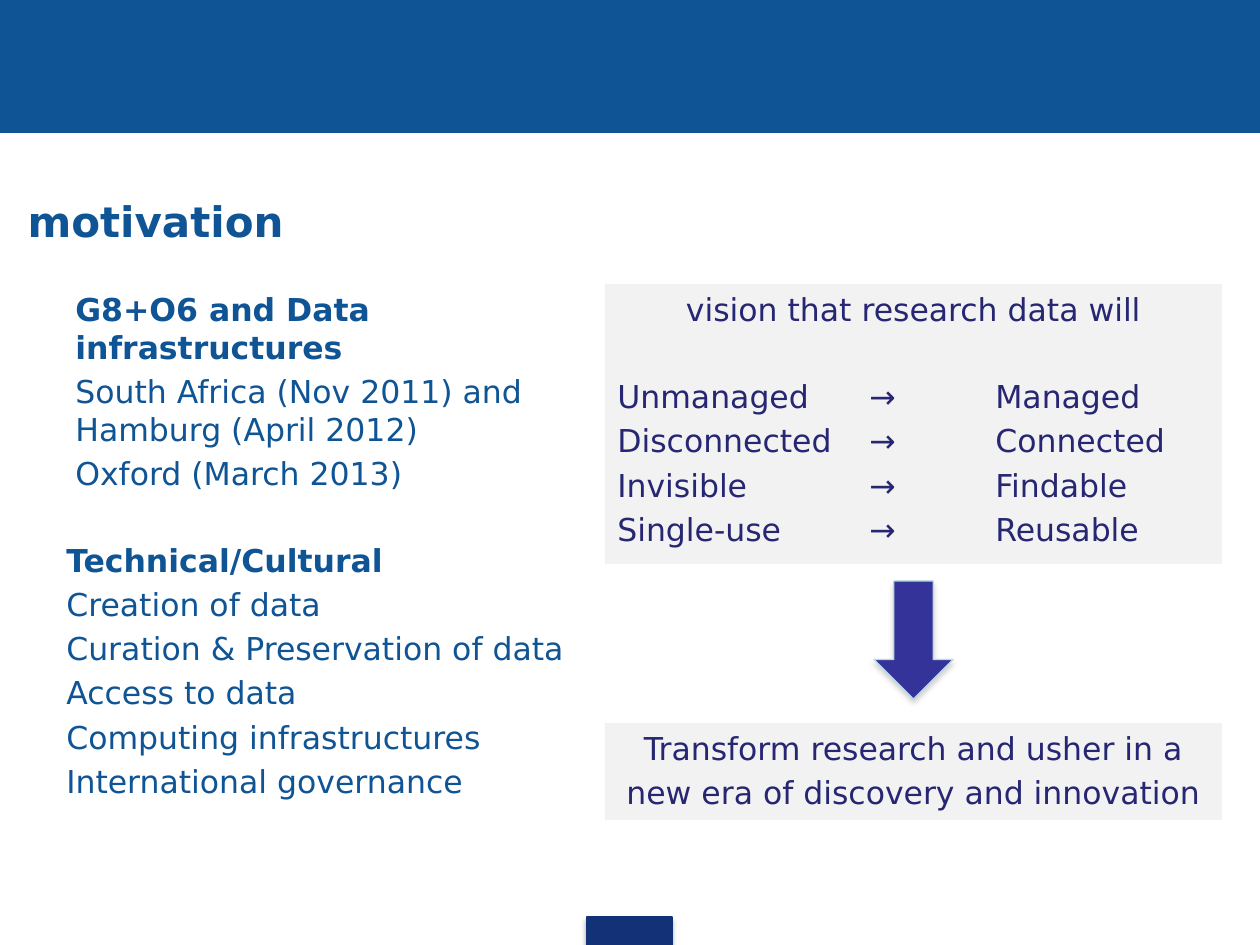
import dataclasses
import typing

import lxml.etree
import pptx
import pptx.dml.color
import pptx.enum.shapes
import pptx.enum.text
import pptx.oxml.ns
import pptx.util

PX = 914400 / 126
FONT = "DejaVu Sans"
BLUE, NAVY, INK, PALE = "0F5494", "133176", "262673", "F2F2F2"
SHAPE = pptx.enum.shapes.MSO_SHAPE
ALIGN = pptx.enum.text.PP_ALIGN
ANCHOR = pptx.enum.text.MSO_ANCHOR
GAP, BREAK = 3.6, 28.2  # points before a line, and before a new group


@dataclasses.dataclass
class Box:
    left: int
    top: int
    width: int
    height: int

    def emu(self) -> list[int]:
        return [round(n * PX) for n in dataclasses.astuple(self)]


@dataclasses.dataclass
class Line:
    text: str
    bold: bool = False
    align: typing.Any = ALIGN.LEFT
    indent: int = 0
    before: float = GAP
    tabs: tuple[int, ...] = ()


def color(code: str) -> pptx.dml.color.RGBColor:
    return pptx.dml.color.RGBColor.from_string(code)


def child(parent, tag: str, **attrs):
    node = lxml.etree.SubElement(parent, pptx.oxml.ns.qn(tag))
    for key, value in attrs.items():
        node.set(key, str(value))
    return node


def write(frame, lines: list[Line], *, ink: str, size: int = 18, anchor=ANCHOR.TOP):
    frame.word_wrap = True
    frame.auto_size = pptx.enum.text.MSO_AUTO_SIZE.NONE
    frame.vertical_anchor = anchor
    for i, line in enumerate(lines):
        para = frame.add_paragraph() if i else frame.paragraphs[0]
        para.alignment = line.align
        para.space_before = pptx.util.Pt(line.before if i else 0)
        props = para._p.get_or_add_pPr()
        props.set("marL", str(round(line.indent * PX)))
        if line.tabs:
            stops = child(props, "a:tabLst")
            for tab in line.tabs:
                child(stops, "a:tab", pos=round(tab * PX), algn="l")
        run = para.add_run()
        run.text = line.text
        font = run.font
        font.name, font.size, font.bold = FONT, pptx.util.Pt(size), line.bold
        font.color.rgb = color(ink)


def draw(slide, kind, box: Box, fill: str, edge: str = "", shade: str = ""):
    """Add a filled shape, with an outline and a soft shadow if colours are given."""
    shape = slide.shapes.add_shape(kind, *box.emu())
    shape.fill.solid()
    shape.fill.fore_color.rgb = color(fill)
    if edge:
        shape.line.color.rgb = color(edge)
        shape.line.width = pptx.util.Pt(0.75)
    else:
        shape.line.fill.background()
    shape.shadow.inherit = False
    if shade:
        effects = shape._element.spPr.find(pptx.oxml.ns.qn("a:effectLst"))
        shadow = child(effects, "a:outerShdw", blurRad=pptx.util.Pt(3.1),
                       dist=pptx.util.Pt(1.8), dir=90 * 60000, rotWithShape=0)
        child(child(shadow, "a:srgbClr", val=shade), "a:alpha", val=35000)
    return shape


def main():
    deck = pptx.Presentation()
    deck.slide_width, deck.slide_height = pptx.util.Inches(10), pptx.util.Inches(7.5)
    slide = deck.slides.add_slide(deck.slide_layouts[5])

    draw(slide, SHAPE.RECTANGLE, Box(0, 0, 1260, 132), BLUE, BLUE)
    draw(slide, SHAPE.RECTANGLE, Box(587, 917, 85, 28), NAVY, NAVY, "000000")

    title = slide.shapes.title
    title.left, title.top, title.width, title.height = Box(15, 192, 1134, 58).emu()
    write(title.text_frame, [Line("motivation", bold=True)], ink=BLUE, size=24,
          anchor=ANCHOR.MIDDLE)

    events = ["South Africa (Nov 2011) and Hamburg (April 2012)", "Oxford (March 2013)"]
    topics = ["Creation of data", "Curation & Preservation of data", "Access to data",
              "Computing infrastructures", "International governance"]
    lines = [Line("G8+O6 and Data infrastructures", bold=True, indent=48)]
    lines += [Line(text, indent=48) for text in events]
    lines += [Line("Technical/Cultural", bold=True, indent=39, before=BREAK)]
    lines += [Line(text, indent=39) for text in topics]
    body = slide.shapes.add_textbox(*Box(15, 284, 567, 576).emu())
    write(body.text_frame, lines, ink=BLUE)

    shifts = [("Unmanaged", "Managed"), ("Disconnected", "Connected"),
              ("Invisible", "Findable"), ("Single-use", "Reusable")]
    lines = [Line("vision that research data will", align=ALIGN.CENTER)]
    lines += [Line(f"{old}\t→\t{new}", before=GAP if i else BREAK, tabs=(252, 378))
              for i, (old, new) in enumerate(shifts)]
    vision = draw(slide, SHAPE.RECTANGLE, Box(605, 284, 617, 280), PALE)
    write(vision.text_frame, lines, ink=INK)

    goals = ["Transform research and usher in a", "new era of discovery and innovation"]
    result = draw(slide, SHAPE.RECTANGLE, Box(605, 723, 617, 97), PALE)
    write(result.text_frame, [Line(text, align=ALIGN.CENTER) for text in goals], ink=INK)

    draw(slide, SHAPE.DOWN_ARROW, Box(874, 581, 79, 118), "333399", "B6DCDF", "808080")
    deck.save("out.pptx")


if __name__ == "__main__":
    main()
